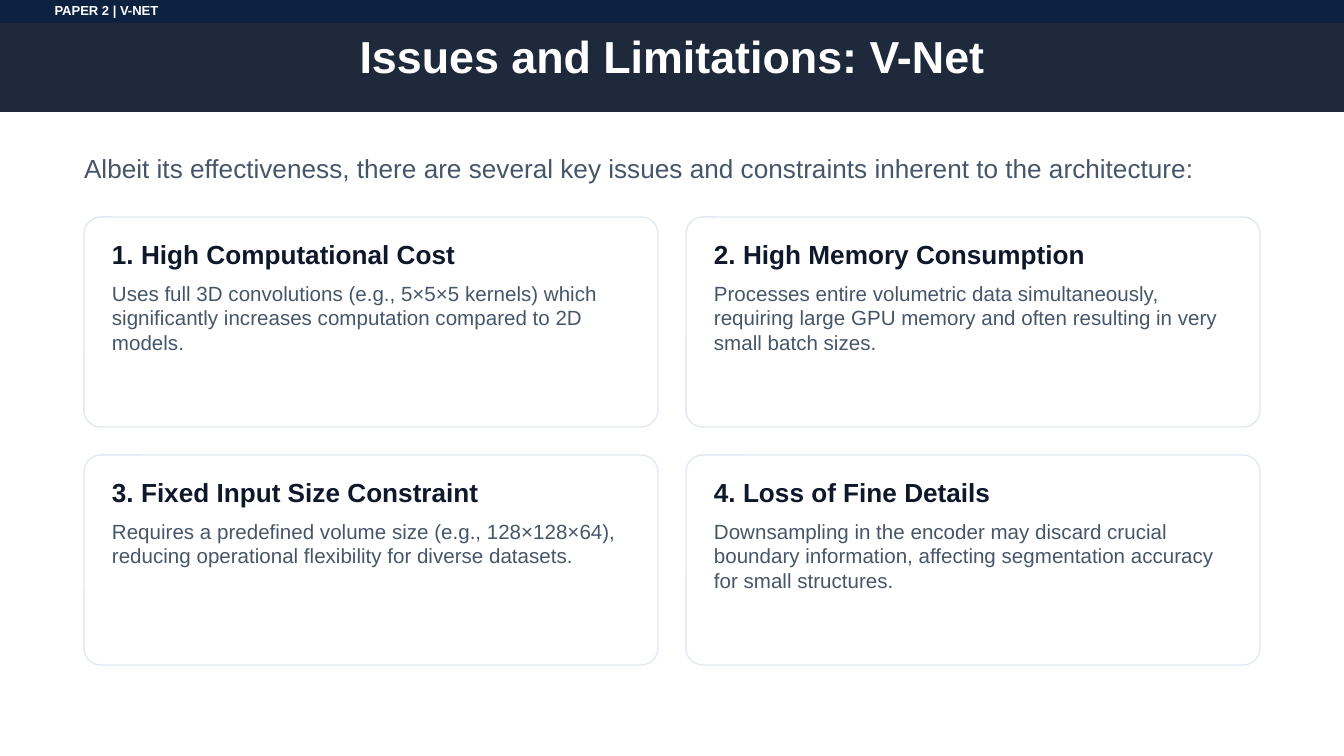
"""Build the slide on the issues and limitations of V-Net."""
from dataclasses import dataclass

from pptx import Presentation
from pptx.dml.color import RGBColor
from pptx.enum.shapes import MSO_SHAPE as Shape
from pptx.enum.text import MSO_ANCHOR as Anchor, PP_ALIGN as Align
from pptx.util import Emu, Pt

SECTION = "PAPER 2 | V-NET"
TITLE = "Issues and Limitations: V-Net"
INTRO = ("Albeit its effectiveness, there are several key issues and constraints "
         "inherent to the architecture:")
ISSUES = [
    ("1. High Computational Cost",
     "Uses full 3D convolutions (e.g., 5×5×5 kernels) which significantly "
     "increases computation compared to 2D models."),
    ("2. High Memory Consumption",
     "Processes entire volumetric data simultaneously, requiring large GPU memory "
     "and often resulting in very small batch sizes."),
    ("3. Fixed Input Size Constraint",
     "Requires a predefined volume size (e.g., 128×128×64), reducing operational "
     "flexibility for diverse datasets."),
    ("4. Loss of Fine Details",
     "Downsampling in the encoder may discard crucial boundary information, "
     "affecting segmentation accuracy for small structures."),
]


@dataclass(frozen=True)
class Theme:
    font: str = "Arial"
    white: str = "FFFFFF"
    header: str = "1E293B"
    strip: str = "0C2240"
    border: str = "E2E8F0"
    heading: str = "0F172A"
    body: str = "475569"
    title_size: int = 24
    heading_size: int = 14
    body_size: int = 11
    section_size: int = 7


THEME = Theme()
PX = 9525
WIDTH, HEIGHT = 960, 540
MARGIN, CARD_TOP = 60, 155
CARD_WIDTH, CARD_HEIGHT, GAP = 410, 150, 20
PAD_X, PAD_Y = 20, 15
COLUMNS = 2


def px(*lengths):
    return [Emu(length * PX) for length in lengths]


def add_panel(shapes, area, fill, line=None, line_width=0.75, radius=None):
    kind = Shape.RECTANGLE if radius is None else Shape.ROUNDED_RECTANGLE
    panel = shapes.add_shape(kind, *px(*area))
    panel.shadow.inherit = False
    if radius is not None:
        panel.adjustments[0] = radius
    panel.fill.solid()
    panel.fill.fore_color.rgb = RGBColor.from_string(fill)
    if line:
        panel.line.color.rgb = RGBColor.from_string(line)
        panel.line.width = Pt(line_width)
    else:
        panel.line.fill.background()


def add_text_box(shapes, area, anchor=Anchor.MIDDLE):
    frame = shapes.add_textbox(*px(*area)).text_frame
    frame.word_wrap = True
    frame.vertical_anchor = anchor
    frame.margin_left = frame.margin_top = frame.margin_right = frame.margin_bottom = 0
    return frame


def write(para, text, size, color, bold=False, align=Align.LEFT, before=None):
    para.alignment = align
    if before is not None:
        para.space_before = Pt(before)
    span = para.add_run()
    span.text = text
    span.font.name = THEME.font
    span.font.size = Pt(size)
    span.font.bold = bold
    span.font.color.rgb = RGBColor.from_string(color)


def add_card(page, index, heading, body):
    row, column = divmod(index, COLUMNS)
    left = MARGIN + column * (CARD_WIDTH + GAP)
    top = CARD_TOP + row * (CARD_HEIGHT + GAP)
    shapes = page.shapes.add_group_shape().shapes
    add_panel(shapes, (left, top, CARD_WIDTH, CARD_HEIGHT), THEME.white,
              line=THEME.border, radius=0.08)
    inner = (left + PAD_X, top + PAD_Y, CARD_WIDTH - 2 * PAD_X, CARD_HEIGHT - 2 * PAD_Y)
    frame = add_text_box(shapes, inner, anchor=Anchor.TOP)
    write(frame.paragraphs[0], heading, THEME.heading_size, THEME.heading, bold=True)
    write(frame.add_paragraph(), body, THEME.body_size, THEME.body, before=6)


def main():
    deck = Presentation()
    deck.slide_width, deck.slide_height = px(WIDTH, HEIGHT)
    page = deck.slides.add_slide(deck.slide_layouts[6])
    shapes = page.shapes

    add_panel(shapes, (0, 0, WIDTH, 80), THEME.header)
    title = add_text_box(shapes, (40, 0, WIDTH - 80, 80))
    write(title.paragraphs[0], TITLE, THEME.title_size, THEME.white,
          bold=True, align=Align.CENTER)
    intro = add_text_box(shapes, (MARGIN, 100, WIDTH - 2 * MARGIN, 40))
    write(intro.paragraphs[0], INTRO, THEME.heading_size, THEME.body)

    for index, (heading, body) in enumerate(ISSUES):
        add_card(page, index, heading, body)

    add_panel(shapes, (0, 0, WIDTH, 16), THEME.strip, line=THEME.strip, line_width=1)
    section = add_text_box(shapes, (39, 3, 302, 9))
    write(section.paragraphs[0], SECTION, THEME.section_size, THEME.white, bold=True)

    deck.save("out.pptx")


if __name__ == "__main__":
    main()
